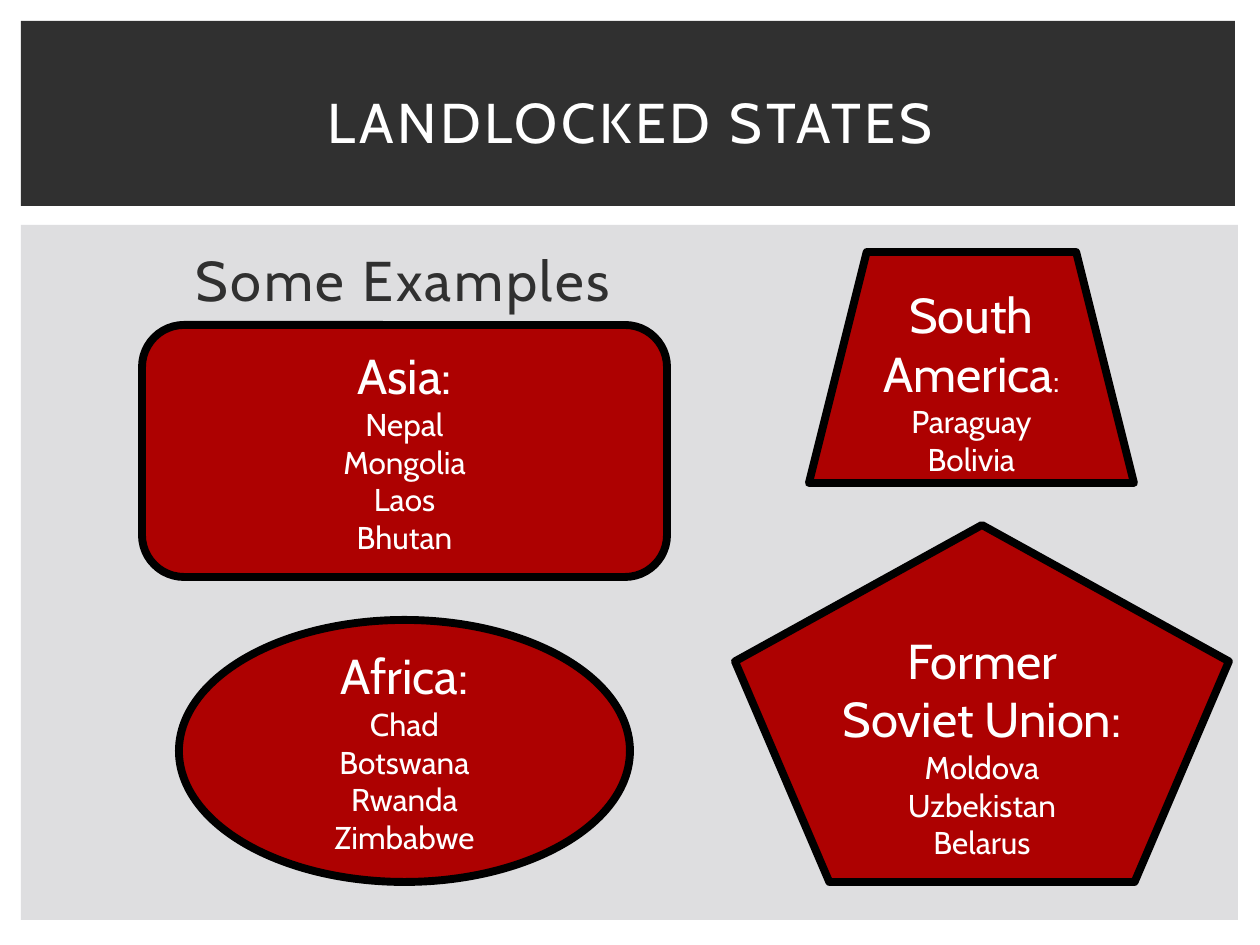
import pptx
import pptx.util
from pptx.dml.color import RGBColor
from pptx.enum.shapes import MSO_SHAPE
from pptx.enum.text import MSO_ANCHOR, PP_ALIGN

PX = 914400 / 126
FONT = "Cabin"
WHITE = RGBColor(0xFF, 0xFF, 0xFF)
BLACK = RGBColor(0, 0, 0)
CHARCOAL = RGBColor(0x30, 0x30, 0x30)
PALE_GREY = RGBColor(0xDE, 0xDE, 0xE0)
RED = RGBColor(0xAD, 0x01, 0x01)

PANELS = [
    ((21, 225, 1217, 695), PALE_GREY),
    ((21, 21, 1214, 185), CHARCOAL),
]
HEADING = "LANDLOCKED STATES"
SUBHEADING = "Some Examples"
REGIONS = [
    (MSO_SHAPE.ROUNDED_RECTANGLE, (142, 325, 525, 252), "Asia", 28,
     ["Nepal", "Mongolia", "Laos", "Bhutan"]),
    (MSO_SHAPE.OVAL, (179, 620, 451, 262), "Africa", 28,
     ["Chad", "Botswana", "Rwanda", "Zimbabwe"]),
    (MSO_SHAPE.TRAPEZOID, (809, 252, 325, 231), "South America", 18,
     ["Paraguay", "Bolivia"]),
    (MSO_SHAPE.REGULAR_PENTAGON, (735, 525, 494, 357), "Former Soviet Union", 28,
     ["Moldova", "Uzbekistan", "Belarus"]),
]


def emu(box):
    return [round(length * PX) for length in box]


def write(paragraph, text, size=18, color=WHITE, align=PP_ALIGN.CENTER, spacing=0):
    paragraph.alignment = align
    run = paragraph.add_run()
    run.text = text
    run.font.name = FONT
    run.font.size = pptx.util.Pt(size)
    run.font.color.rgb = color
    if spacing:
        run._r.get_or_add_rPr().set("spc", str(round(spacing * 100)))


def draw(slide, kind, box, fill, outline=None):
    shape = slide.shapes.add_shape(kind, *emu(box))
    shape.shadow.inherit = False
    shape.fill.solid()
    shape.fill.fore_color.rgb = fill
    if outline is None:
        shape.line.fill.background()
    else:
        shape.line.color.rgb = outline
        shape.line.width = pptx.util.Pt(4.5)
    return shape


def label(slide, box, text, anchor, **style):
    frame = slide.shapes.add_textbox(*emu(box)).text_frame
    frame.word_wrap = True
    frame.vertical_anchor = anchor
    write(frame.paragraphs[0], text, size=32, **style)


def main():
    deck = pptx.Presentation()
    deck.slide_width, deck.slide_height = emu((1260, 945))
    slide = deck.slides.add_slide(deck.slide_layouts[6])

    for box, fill in PANELS:
        draw(slide, MSO_SHAPE.RECTANGLE, box, fill)

    label(slide, (183, 239, 500, 80), SUBHEADING, MSO_ANCHOR.TOP,
          color=CHARCOAL, align=PP_ALIGN.LEFT, spacing=1.5)
    label(slide, (53, 49, 1155, 145), HEADING, MSO_ANCHOR.MIDDLE, spacing=2)

    for kind, box, region, colon_size, countries in REGIONS:
        frame = draw(slide, kind, box, RED, BLACK).text_frame
        frame.word_wrap = True
        frame.vertical_anchor = MSO_ANCHOR.MIDDLE
        write(frame.paragraphs[0], region, size=28)
        write(frame.paragraphs[0], ":", size=colon_size)
        for country in countries:
            write(frame.add_paragraph(), country)

    deck.save("out.pptx")


if __name__ == "__main__":
    main()
